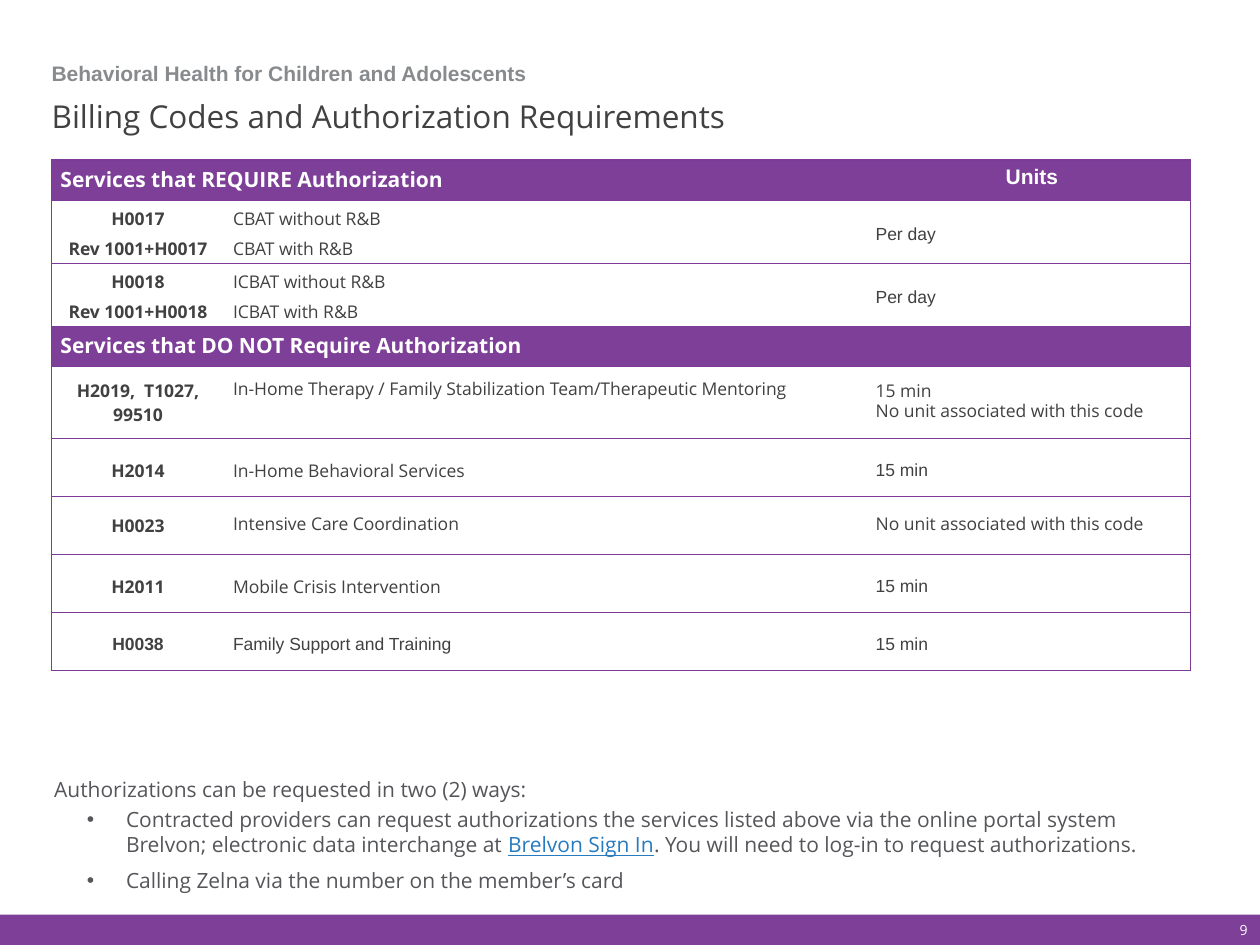
from dataclasses import dataclass

from lxml.etree import SubElement
from pptx import Presentation
from pptx.dml.color import RGBColor
from pptx.enum.shapes import MSO_SHAPE
from pptx.enum.text import MSO_ANCHOR as Anchor, MSO_AUTO_SIZE as AutoSize, PP_ALIGN as Align
from pptx.oxml import parse_xml
from pptx.oxml.ns import nsdecls, qn
from pptx.util import Inches, Pt


@dataclass(frozen=True)
class Theme:
    purple: str = "7D3F98"
    rule: str = "7B3B97"
    dark: str = "414141"
    gray: str = "888B8D"
    body: str = "55565A"
    link: str = "267AC0"
    white: str = "FFFFFF"
    sans: str = "Open Sans"
    arial: str = "Arial"
    title_size: float = 18
    text_size: float = 12
    cell_size: float = 10
    number_size: float = 8
    rule_width: float = 0.75


THEME = Theme()
COLUMNS = (1.35, 5.1, 2.59)
REQUIRED, NOT_REQUIRED = "Services that REQUIRE Authorization", "Services that DO NOT Require Authorization"
NO_UNIT = "No unit associated with this code"
# Row height, then the code, service and unit texts; a band has no service
ROWS = (
    (0.32, REQUIRED, None, "Units"),
    (0.5, "H0017\nRev 1001+H0017", "CBAT without R&B\nCBAT with R&B", "Per day"),
    (0.5, "H0018\nRev 1001+H0018", "ICBAT without R&B\nICBAT with R&B", "Per day"),
    (0.32, NOT_REQUIRED, None, ""),
    (0.57, "H2019,  T1027, 99510",
     "In-Home Therapy / Family Stabilization Team/Therapeutic Mentoring", "15 min\n" + NO_UNIT),
    (0.46, "H2014", "In-Home Behavioral Services", "15 min"),
    (0.46, "H0023", "Intensive Care Coordination", NO_UNIT),
    (0.46, "H2011", "Mobile Crisis Intervention", "15 min"),
    (0.46, "H0038", "Family Support and Training", "15 min"),
)


def style_runs(paragraph, size, color, font=THEME.sans, bold=False):
    for run in paragraph.runs:
        run.font.size, run.font.name, run.font.bold = Pt(size), font, bold
        run.font.color.rgb = RGBColor.from_string(color)


def indent(paragraph, left, first=0, bullet=None):
    properties = paragraph._p.get_or_add_pPr()
    properties.set("marL", str(Inches(left)))
    properties.set("indent", str(Inches(first)))
    if bullet:
        SubElement(properties, qn("a:buChar")).set("char", bullet)
    else:
        SubElement(properties, qn("a:buNone"))


def place(shape, box, anchor, top_inset=0):
    shape.left, shape.top, shape.width, shape.height = (Inches(length) for length in box)
    frame = shape.text_frame
    frame.word_wrap, frame.auto_size, frame.vertical_anchor = True, AutoSize.NONE, anchor
    frame.margin_left = frame.margin_right = frame.margin_bottom = 0
    frame.margin_top = Inches(top_inset)
    return frame


def add_heading(shape, box, text, anchor, spacing, **style):
    frame = place(shape, box, anchor)
    frame.text = text
    paragraph = frame.paragraphs[0]
    paragraph.alignment, paragraph.line_spacing = Align.LEFT, spacing
    paragraph.space_before = Pt(0)
    indent(paragraph, 0)
    style_runs(paragraph, **style)


def add_borders(cell, edges):
    """Rule the given edges (letters of LRTB) and clear the others."""
    properties = cell._tc.get_or_add_tcPr()
    for position, edge in enumerate("LRTB"):
        paint = (f'<a:solidFill><a:srgbClr val="{THEME.rule}"/></a:solidFill>'
                 if edge in edges else "<a:noFill/>")
        properties.insert(position, parse_xml(
            f'<a:ln{edge} {nsdecls("a")} w="{Pt(THEME.rule_width)}">{paint}</a:ln{edge}>'))


def fill_cell(cell, text, column, band):
    """Write one cell and set its spacing by its role."""
    exact = NO_UNIT in text or text.startswith(("In-Home Therapy", "Intensive"))
    tight = exact or text.startswith(("H2019", "H0023"))
    two_lines = "\n" in text and not exact
    cell.margin_left = cell.margin_right = cell.margin_bottom = 0
    cell.margin_top = Inches(0 if tight or not text else 0.04 if band else 0.05)
    cell.vertical_anchor = Anchor.TOP if band or two_lines else Anchor.MIDDLE
    if text.startswith("In-Home Therapy"):
        cell.vertical_anchor, cell.margin_top = Anchor.TOP, Inches(0.11)
    if band:
        cell.fill.solid()
        cell.fill.fore_color.rgb = RGBColor.from_string(THEME.purple)
    else:
        cell.fill.background()
    if not text:
        return
    cell.text_frame.text = text
    arial = (text in ("Units", "Per day", "15 min", "H0038")
             or text.startswith("Family Support"))
    for paragraph in cell.text_frame.paragraphs:
        centered = text == "Units" or (column == 0 and not band)
        paragraph.alignment = Align.CENTER if centered else Align.LEFT
        if exact:
            paragraph.line_spacing = Pt(11.7)
        elif not tight:
            paragraph.space_before = Pt(2.6 if band else 3.9 if column else 3.6)
        elif text.startswith("H2019"):
            paragraph.space_before = Pt(8.3)
        indent(paragraph, 0.07 if band else 0.09 if column else 0.02)
        style_runs(paragraph, THEME.text_size if band else THEME.cell_size,
                   THEME.white if band else THEME.dark,
                   THEME.arial if arial else THEME.sans, band or column == 0)


def add_code_table(slide, left, top):
    heights = [row[0] for row in ROWS]
    table = slide.shapes.add_table(
        len(ROWS), len(COLUMNS), Inches(left), Inches(top),
        Inches(sum(COLUMNS)), Inches(sum(heights))).table
    table.first_row = table.horz_banding = False
    for column, width in zip(table.columns, COLUMNS):
        column.width = Inches(width)
    for row_index, (height, *texts) in enumerate(ROWS):
        table.rows[row_index].height = Inches(height)
        band = texts[1] is None
        if band:
            table.cell(row_index, 0).merge(table.cell(row_index, 1))
        for column, text in enumerate(texts):
            cell = table.cell(row_index, column)
            fill_cell(cell, text or "", column, band)
            add_borders(cell, "TB" + ("L", "", "R")[column])


def add_request_list(shape, box):
    frame = place(shape, box, Anchor.TOP, 0.06)
    frame.text = "\n".join((
        "Authorizations can be requested in two (2) ways:",
        "Contracted providers can request authorizations the services listed above via the "
        "online portal system Brelvon; electronic data interchange at ",
        "Calling Zelna via the number on the member’s card"))
    lead, portal, phone = frame.paragraphs
    for text in ("Brelvon Sign In", ". You will need to log-in to request authorizations."):
        portal.add_run().text = text
    for paragraph, before in ((lead, 4), (portal, 3), (phone, 6)):
        paragraph.space_before, paragraph.line_spacing = Pt(before), 1.0
        style_runs(paragraph, THEME.text_size, THEME.body)
    indent(lead, 0.01)
    for paragraph in (portal, phone):
        indent(paragraph, 0.58, -0.31, "•")
    link = portal.runs[1].font
    link.underline, link.color.rgb = True, RGBColor.from_string(THEME.link)


def add_footer(slide, box, number):
    left, top, width, height = box
    bar = slide.shapes.add_shape(MSO_SHAPE.RECTANGLE, *(Inches(length) for length in box))
    bar.shadow.inherit = False
    bar.fill.solid()
    bar.fill.fore_color.rgb = RGBColor.from_string(THEME.purple)
    bar.line.fill.background()
    label = slide.shapes.add_textbox(0, 0, 0, 0)
    frame = place(label, (left + width - 0.81, top, 0.81, height), Anchor.MIDDLE)
    frame.margin_right = Inches(0.1)
    frame.text = number
    frame.paragraphs[0].alignment = Align.RIGHT
    style_runs(frame.paragraphs[0], THEME.number_size, THEME.white)


def main():
    presentation = Presentation()
    presentation.slide_width, presentation.slide_height = Inches(10), Inches(7.5)
    slide = presentation.slides.add_slide(presentation.slide_layouts[3])
    title, subject, requests = slide.placeholders
    # Headings
    add_heading(title, (0.41, 0.8, 9, 0.42), "Billing Codes and Authorization Requirements",
                Anchor.TOP, 0.9, size=THEME.title_size, color=THEME.dark)
    add_heading(subject, (0.41, 0.38, 9, 0.3), "Behavioral Health for Children and Adolescents",
                Anchor.BOTTOM, 1.0, size=THEME.text_size, color=THEME.gray,
                font=THEME.arial, bold=True)
    # Codes, ways to request, footer
    add_code_table(slide, 0.41, 1.27)
    add_request_list(requests, (0.42, 6.1, 9.04, 0.99))
    add_footer(slide, (0, 7.26, 10, 0.24), "9")
    presentation.save("out.pptx")


if __name__ == "__main__":
    main()
